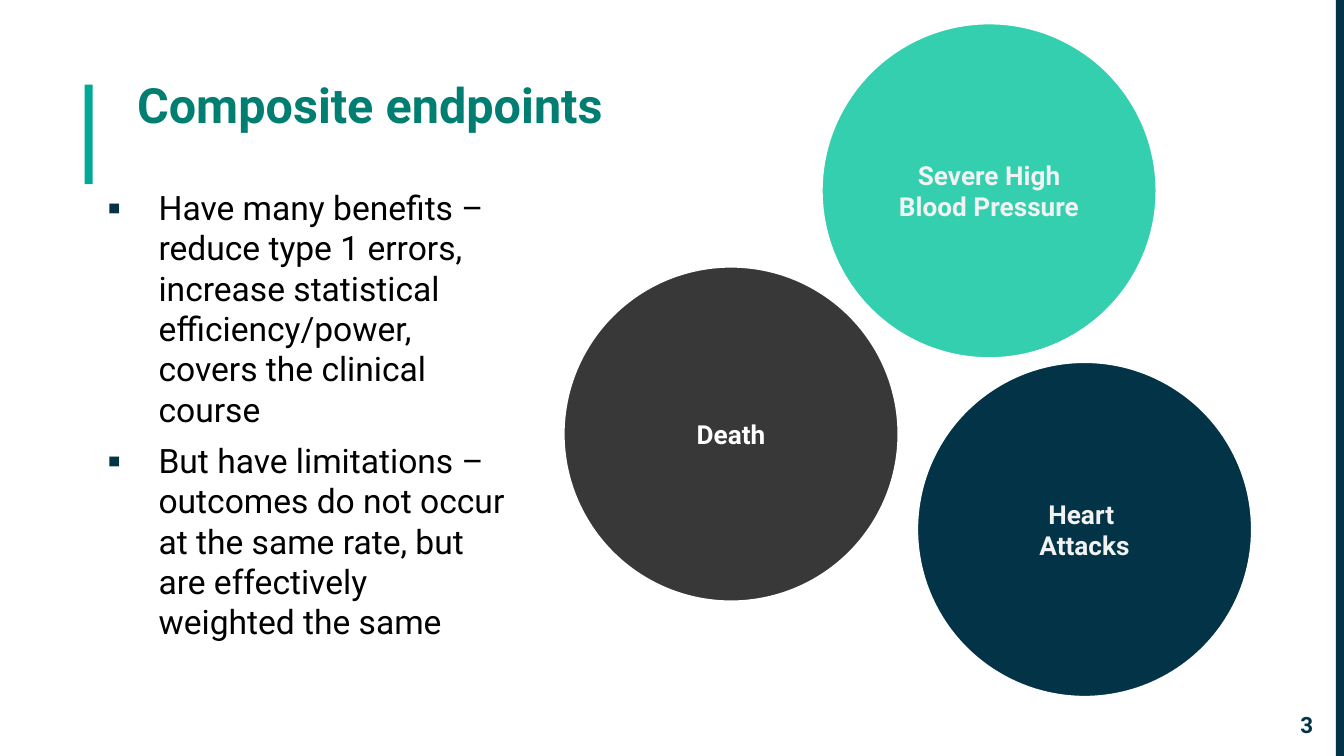
from lxml import etree
from pptx import Presentation
from pptx import util as u
from pptx.dml.color import RGBColor
from pptx.enum import shapes, text
from pptx.oxml.ns import qn

WIDTH = 10
HEIGHT = WIDTH * 9 / 16
FONT = "Roboto"
TEAL = RGBColor(0x00, 0xA8, 0x96)
DARK_TEAL = RGBColor(0x00, 0x7E, 0x71)
NAVY = RGBColor(0x02, 0x33, 0x46)
GREEN = RGBColor(0x02, 0xC3, 0x9A)
CHARCOAL = RGBColor(0x0D, 0x0D, 0x0D)
BLACK = RGBColor(0x00, 0x00, 0x00)
WHITE = RGBColor(0xFF, 0xFF, 0xFF)
PALE = RGBColor(0xF2, 0xF2, 0xF2)

DIAMETER = 2.56
BULLETS = [
    "Have many benefits – reduce type 1 errors, increase statistical "
    "efficiency/power, covers the clinical course",
    "But have limitations – outcomes do not occur at the same rate, "
    "but are effectively weighted the same",
]
# Left, top, fill, opacity in percent, text colour, lines
CIRCLES = [
    (6.79, 2.66, NAVY, 100, PALE, ["Heart ", "Attacks"]),
    (6.08, 0.14, GREEN, 80, PALE, ["Severe High Blood Pressure"]),
    (4.16, 1.95, CHARCOAL, 82, WHITE, ["Death"]),
]


def place(box, left, top, width, height):
    box.left, box.top = u.Inches(left), u.Inches(top)
    box.width, box.height = u.Inches(width), u.Inches(height)


def write(box, lines, size, color, bold=False, align=text.PP_ALIGN.LEFT,
          anchor=text.MSO_ANCHOR.TOP, before=0):
    """Fill a shape with one paragraph per line."""
    frame = box.text_frame
    frame.word_wrap = True
    frame.auto_size = text.MSO_AUTO_SIZE.NONE
    frame.vertical_anchor = anchor
    frame.margin_left = frame.margin_right = u.Inches(0.1)
    frame.margin_top = frame.margin_bottom = u.Inches(0.1)
    for index, line in enumerate(lines):
        para = frame.add_paragraph() if index else frame.paragraphs[0]
        para.alignment = align
        para.space_before = u.Pt(before)
        span = para.add_run()
        span.text = line
        span.font.name = FONT
        span.font.size = u.Pt(size)
        span.font.bold = bold
        span.font.color.rgb = color


def add_bullet(para, mark, color):
    """Give a paragraph a hanging, coloured bullet."""
    props = para._p.get_or_add_pPr()
    props.set("marL", str(u.Inches(0.5)))
    props.set("indent", str(u.Inches(-0.38)))
    tint = etree.SubElement(props, qn("a:buClr"))
    etree.SubElement(tint, qn("a:srgbClr"), val=str(color))
    etree.SubElement(props, qn("a:buFont"), typeface=FONT)
    etree.SubElement(props, qn("a:buChar"), char=mark)


def add_bar(page, left, top, width, height, color):
    bar = page.shapes.add_shape(
        shapes.MSO_SHAPE.RECTANGLE,
        *map(u.Inches, (left, top, width, height)))
    bar.shadow.inherit = False
    bar.fill.solid()
    bar.fill.fore_color.rgb = color
    bar.line.fill.background()


def add_circle(page, left, top, fill, opacity, color, lines):
    circle = page.shapes.add_shape(
        shapes.MSO_SHAPE.OVAL,
        *map(u.Inches, (left, top, DIAMETER, DIAMETER)))
    circle.shadow.inherit = False
    circle.fill.solid()
    circle.fill.fore_color.rgb = fill
    if opacity < 100:
        tint = circle.fill._xPr.find(qn("a:solidFill"))[0]
        etree.SubElement(tint, qn("a:alpha"), val=str(opacity * 1000))
    circle.line.color.rgb = WHITE
    circle.line.width = u.Pt(6)
    write(circle, lines, 14, color, bold=True,
          align=text.PP_ALIGN.CENTER, anchor=text.MSO_ANCHOR.MIDDLE)


def main():
    deck = Presentation()
    deck.slide_width, deck.slide_height = u.Inches(WIDTH), u.Inches(HEIGHT)
    page = deck.slides.add_slide(deck.slide_layouts[1])

    # Accent bars
    add_bar(page, 0.63, 0.63, 0.06, 0.74, TEAL)
    add_bar(page, WIDTH - 0.06, 0, 0.06, HEIGHT, NAVY)

    # Title and bullet list
    title, body = page.placeholders
    place(title, 0.92, 0.46, 5.37, 0.94)
    write(title, ["Composite endpoints"], 26, DARK_TEAL, bold=True)
    place(body, 0.58, 1.29, 3.32, 3.44)
    write(body, BULLETS, 18, BLACK, before=6)
    for para in body.text_frame.paragraphs:
        add_bullet(para, "▪", NAVY)

    # Page number
    number = page.shapes.add_textbox(
        *map(u.Inches, (9.27, 5.19, 0.6, 0.43)))
    write(number, ["3"], 12, NAVY, bold=True, align=text.PP_ALIGN.RIGHT)

    # Outcome circles
    for circle in CIRCLES:
        add_circle(page, *circle)

    deck.save("out.pptx")


if __name__ == "__main__":
    main()
